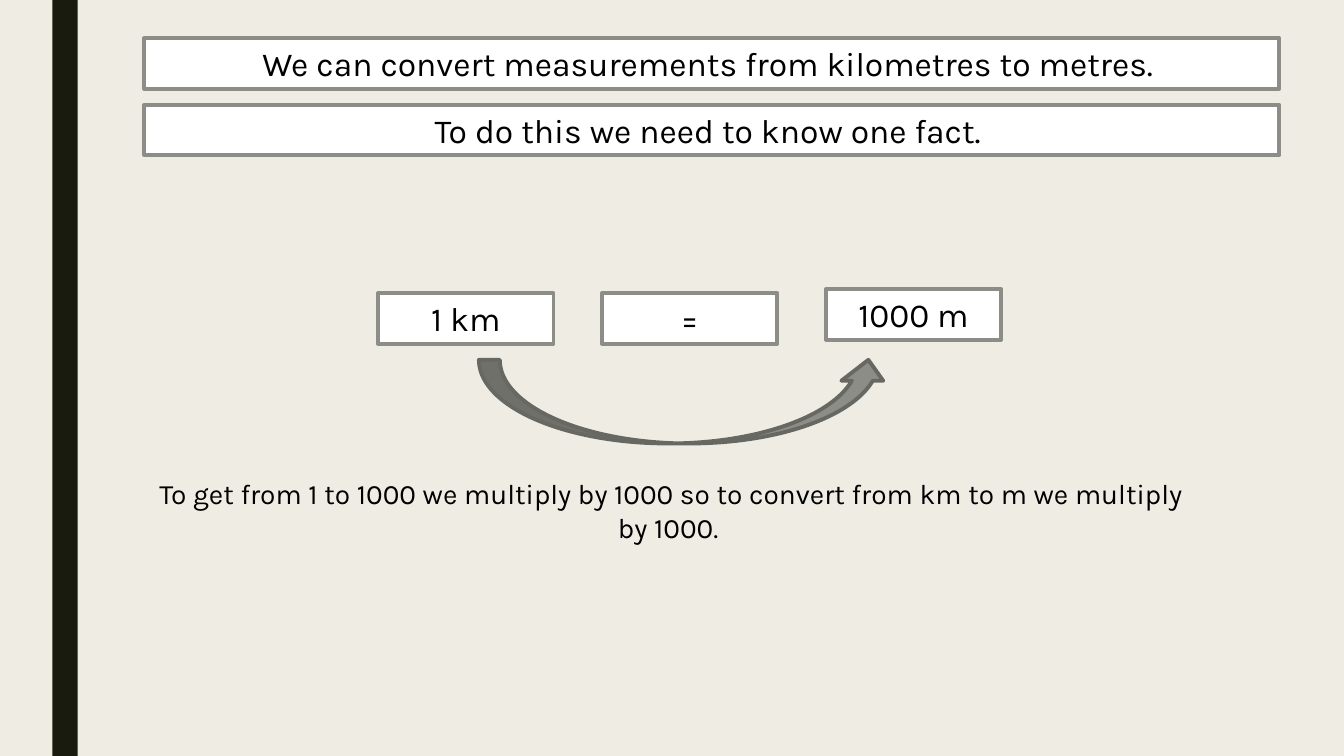
from dataclasses import dataclass

from pptx import Presentation
from pptx.dml.color import RGBColor
from pptx.enum.shapes import MSO_SHAPE
from pptx.enum.text import MSO_ANCHOR, PP_ALIGN
from pptx.util import Inches, Pt


@dataclass(frozen=True)
class Theme:
    background: RGBColor = RGBColor.from_string("EFEDE3")
    band: RGBColor = RGBColor.from_string("191B0E")
    panel: RGBColor = RGBColor.from_string("FFFFFF")
    grey: RGBColor = RGBColor.from_string("8C8D86")
    dark_grey: RGBColor = RGBColor.from_string("686863")
    ink: RGBColor = RGBColor.from_string("000000")
    font: str = "Karla"
    large: Pt = Pt(24)
    small: Pt = Pt(20)
    border: Pt = Pt(2.75)


theme = Theme()

deck = Presentation()
deck.slide_width = Inches(13.33)
deck.slide_height = Inches(7.5)
page = deck.slides.add_slide(deck.slide_layouts[6])
page.background.fill.solid()
page.background.fill.fore_color.rgb = theme.background


def add_figure(kind, left, top, width, height, fill, line=None):
    figure = page.shapes.add_shape(
        kind, Inches(left), Inches(top), Inches(width), Inches(height))
    figure.shadow.inherit = False
    figure.fill.solid()
    figure.fill.fore_color.rgb = fill
    if line is None:
        figure.line.fill.background()
    else:
        figure.line.color.rgb = line
        figure.line.width = theme.border
    return figure


def write_text(box, text, size):
    frame = box.text_frame
    frame.word_wrap = True
    frame.vertical_anchor = MSO_ANCHOR.TOP
    para = frame.paragraphs[0]
    para.alignment = PP_ALIGN.CENTER
    span = para.add_run()
    span.text = text
    span.font.name = theme.font
    span.font.size = size
    span.font.color.rgb = theme.ink


# Side band
add_figure(MSO_SHAPE.RECTANGLE, 0.52, 0, 0.25, 7.5, theme.band)

# Statements and the conversion fact: left, top, width, text
panels = [
    (1.43, 0.38, 11.26, "We can convert measurements from kilometres to metres. "),
    (1.43, 1.04, 11.26, "To do this we need to know one fact. "),
    (3.75, 2.91, 1.74, "1 km"),
    (5.97, 2.91, 1.74, "="),
    (8.19, 2.87, 1.74, "1000 m"),
]
for left, top, width, text in panels:
    panel = add_figure(MSO_SHAPE.RECTANGLE, left, top, width, 0.5,
                       theme.panel, theme.grey)
    write_text(panel, text, theme.large)

# Arrow from kilometres to metres
add_figure(MSO_SHAPE.CURVED_UP_ARROW, 4.75, 3.57, 4.07, 0.83,
           theme.grey, theme.dark_grey)

# Explanation
explanation = page.shapes.add_textbox(
    Inches(1.43), Inches(4.68), Inches(10.46), Inches(0.77))
write_text(explanation,
           "To get from 1 to 1000 we multiply by 1000 so to convert "
           "from km to m we multiply by 1000. ", theme.small)

deck.save("out.pptx")
